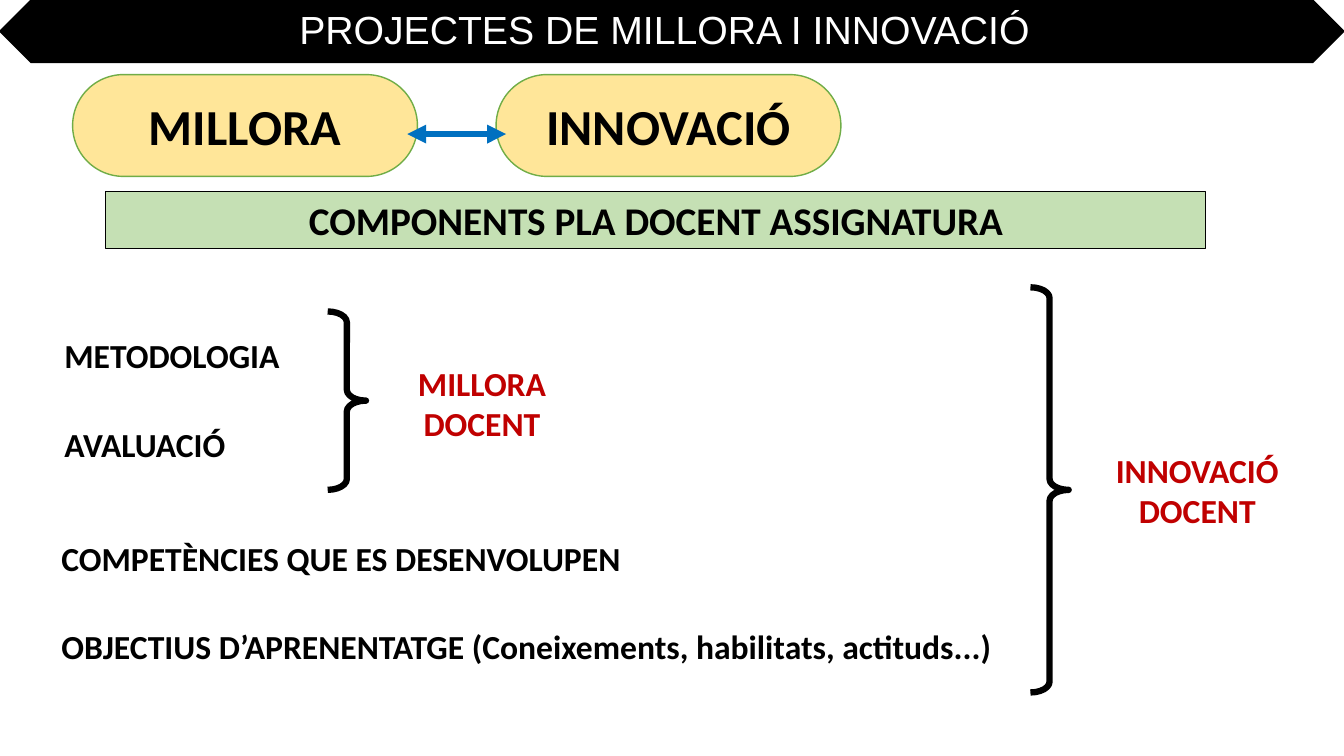
from dataclasses import dataclass

from lxml.etree import SubElement
from pptx import Presentation
from pptx.dml.color import RGBColor as Rgb
from pptx.enum.shapes import MSO_CONNECTOR as Link, MSO_SHAPE as Kind
from pptx.enum.text import MSO_ANCHOR as Anchor, PP_ALIGN as Align
from pptx.oxml.ns import qn
from pptx.shapes.autoshape import Shape
from pptx.slide import Slide
from pptx.util import Inches, Pt


@dataclass(frozen=True)
class Theme:
    black: str = "000000"
    white: str = "FFFFFF"
    cream: str = "FFE699"
    leaf: str = "70AD47"
    mint: str = "C5E0B4"
    blue: str = "0070C0"
    red: str = "C00000"
    sans: str = "Arial"
    body: str = "Calibri"
    large: int = 36
    head: int = 28
    small: int = 24
    thick: float = 4.5


THEME = Theme()


@dataclass(frozen=True)
class Box:
    left: float
    top: float
    width: float
    height: float


@dataclass(frozen=True)
class Font:
    size: int
    color: str = THEME.black
    name: str = THEME.body
    bold: bool = True


@dataclass(frozen=True)
class Form:
    kind: Kind
    box: Box
    fill: str | None
    line: str
    weight: float
    adjust: tuple[float, ...] = ()
    text: str = ""
    size: int = THEME.head


@dataclass(frozen=True)
class Label:
    text: str
    box: Box
    font: Font
    align: Align = Align.LEFT


def brace(box: Box) -> Form:
    return Form(Kind.RIGHT_BRACE, box, None, THEME.black, THEME.thick, (0.284, 0.5))


def pill(text: str, left: float) -> Form:
    box = Box(left, 0.74, 3.42, 1.01)
    return Form(Kind.ROUNDED_RECTANGLE, box, THEME.cream, THEME.leaf, 1, (0.5,), text, THEME.large)


ITEM = Font(THEME.small)
NOTE = Font(THEME.small, THEME.red)

FORMS = [
    Form(Kind.SNIP_2_DIAG_RECTANGLE, Box(0, 0, 13.33, 0.62), THEME.black, THEME.black, 1, (0.5, 0.5)),
    pill("MILLORA", 0.72),
    pill("INNOVACIÓ", 4.92),
    Form(Kind.RECTANGLE, Box(1.05, 1.9, 10.91, 0.57), THEME.mint, THEME.black, 0.75,
         text="COMPONENTS PLA DOCENT ASSIGNATURA"),
    brace(Box(10.22, 2.85, 0.38, 4.02)),
    brace(Box(3.25, 3.09, 0.38, 1.77)),
]

LABELS = [
    Label("PROJECTES DE MILLORA I INNOVACIÓ", Box(2.87, 0, 7.6, 0.57),
          Font(THEME.head, THEME.white, THEME.sans, False)),
    Label("METODOLOGIA", Box(0.54, 3.27, 2.36, 0.5), ITEM),
    Label("AVALUACIÓ", Box(0.54, 4.16, 1.81, 0.5), ITEM),
    Label("COMPETÈNCIES QUE ES DESENVOLUPEN", Box(0.51, 5.29, 5.81, 0.5), ITEM),
    Label("OBJECTIUS D’APRENENTATGE (Coneixements, habilitats, actituds...)",
          Box(0.51, 6.16, 9.46, 0.5), ITEM),
    Label("MILLORA\nDOCENT", Box(4.04, 3.55, 1.48, 0.91), NOTE, Align.CENTER),
    Label("INNOVACIÓ\nDOCENT", Box(10.96, 4.41, 1.83, 0.91), NOTE, Align.CENTER),
]


def place(box: Box) -> tuple[Inches, ...]:
    return tuple(Inches(n) for n in (box.left, box.top, box.width, box.height))


def write(shape: Shape, text: str, font: Font, align: Align) -> None:
    frame = shape.text_frame
    frame.text = text
    for para in frame.paragraphs:
        para.alignment = align
        for run in para.runs:
            run.font.size = Pt(font.size)
            run.font.name = font.name
            run.font.bold = font.bold
            run.font.color.rgb = Rgb.from_string(font.color)


def draw(slide: Slide, form: Form) -> None:
    shape = slide.shapes.add_shape(form.kind, *place(form.box))
    shape.shadow.inherit = False
    for index, value in enumerate(form.adjust):
        shape.adjustments[index] = value
    if form.fill:
        shape.fill.solid()
        shape.fill.fore_color.rgb = Rgb.from_string(form.fill)
    else:
        shape.fill.background()
    shape.line.color.rgb = Rgb.from_string(form.line)
    shape.line.width = Pt(form.weight)
    if form.text:
        shape.text_frame.vertical_anchor = Anchor.MIDDLE
        write(shape, form.text, Font(form.size), Align.CENTER)


def print_label(slide: Slide, label: Label) -> None:
    shape = slide.shapes.add_textbox(*place(label.box))
    shape.text_frame.word_wrap = True
    write(shape, label.text, label.font, label.align)


def join(slide: Slide, start: float, end: float, top: float) -> None:
    arrow = slide.shapes.add_connector(
        Link.STRAIGHT, Inches(start), Inches(top), Inches(end), Inches(top))
    arrow.line.color.rgb = Rgb.from_string(THEME.blue)
    arrow.line.width = Pt(THEME.thick)
    props = arrow.line._get_or_add_ln()
    for tag in ("a:headEnd", "a:tailEnd"):
        SubElement(props, qn(tag), type="triangle")
    SubElement(arrow._element.spPr, qn("a:effectLst"))


def main() -> None:
    deck = Presentation()
    deck.slide_width = Inches(13.33)
    deck.slide_height = Inches(7.5)
    slide = deck.slides.add_slide(deck.slide_layouts[6])
    for form in FORMS:
        draw(slide, form)
    join(slide, 4.04, 5.02, 1.33)
    for label in LABELS:
        print_label(slide, label)
    deck.save("out.pptx")


if __name__ == "__main__":
    main()
